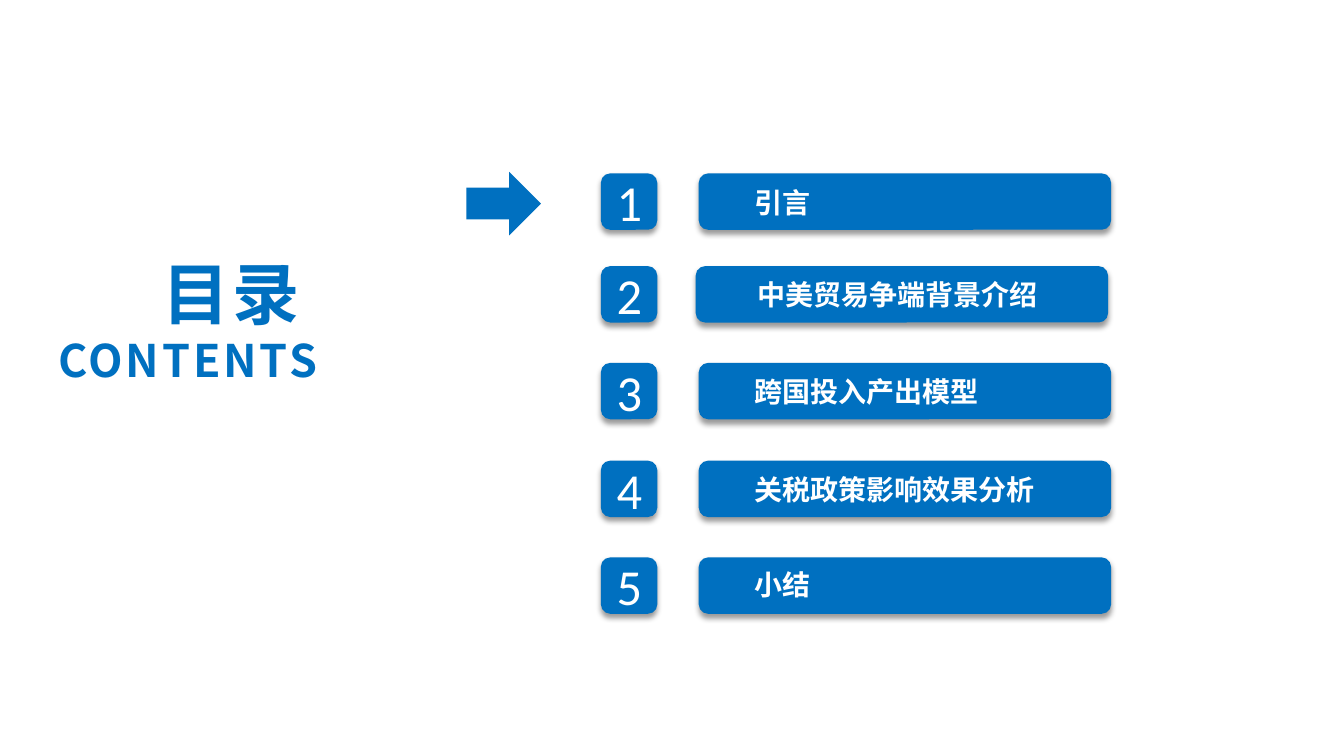
from dataclasses import dataclass

from lxml.etree import SubElement as Sub
from pptx import Presentation
from pptx.dml.color import RGBColor as RGB
from pptx.enum.shapes import MSO_SHAPE as Kind
from pptx.enum.text import MSO_ANCHOR as Anchor, MSO_AUTO_SIZE as Auto, PP_ALIGN as Align
from pptx.oxml.ns import qn
from pptx.util import Inches, Pt


@dataclass(frozen=True)
class Theme:
    """Colours, fonts and type sizes of the agenda."""
    blue: RGB = RGB(0x00, 0x70, 0xC0)
    white: RGB = RGB(0xFF, 0xFF, 0xFF)
    shade: str = "000000"
    latin: str = "Calibri"
    hans: str = "Noto Sans CJK SC"
    digit: int = 36
    label: int = 20
    head: int = 48
    sub: int = 32


class Deck:
    """Draws the agenda elements on the current slide."""

    def __init__(self, theme):
        """Open a blank widescreen slide."""
        self.theme = theme
        self.prs = Presentation()
        self.prs.slide_width, self.prs.slide_height = Inches(13.33), Inches(7.5)
        self.slide = self.prs.slides.add_slide(self.prs.slide_layouts[6])

    def form(self, home, kind, box):
        """Add a plain blue shape."""
        shape = home.add_shape(kind, *map(Inches, box))
        shape.shadow.inherit = False
        shape.fill.solid()
        shape.fill.fore_color.rgb = self.theme.blue
        shape.line.fill.background()
        return shape

    def card(self, home, box):
        """Add a rounded blue card with a soft shadow below."""
        shape = self.form(home, Kind.ROUNDED_RECTANGLE, box)
        glow = shape.element.spPr.find(qn("a:effectLst"))
        drop = Sub(glow, qn("a:outerShdw"), blurRad=str(Pt(4)), dist=str(Pt(3)),
                   dir="5400000", algn="t", rotWithShape="0")
        tone = Sub(drop, qn("a:srgbClr"), val=self.theme.shade)
        Sub(tone, qn("a:alpha"), val="40000")
        return shape

    def style(self, para, face, size, color, bold=False, gap=0):
        """Format every run of a paragraph."""
        for run in para.runs:
            font = run.font
            font.name, font.size, font.bold = face, Pt(size), bold
            font.color.rgb = color
            props = run._r.get_or_add_rPr()
            Sub(props, qn("a:ea"), typeface=face)
            if gap:
                props.set("spc", str(gap * 100))

    def inset(self, frame):
        """Set the common text margins."""
        frame.margin_left = frame.margin_right = Inches(0.13)
        frame.margin_top = frame.margin_bottom = Inches(0.07)
        frame.word_wrap = True

    def note(self, home, box, text):
        """Add a text box that grows with its text."""
        frame = home.add_textbox(*map(Inches, box)).text_frame
        self.inset(frame)
        frame.auto_size = Auto.SHAPE_TO_FIT_TEXT
        frame.text = text
        return frame

    def badge(self, num, top):
        """Add a numbered square."""
        frame = self.card(self.slide.shapes, (5.96, top, 0.56, 0.56)).text_frame
        self.inset(frame)
        frame.vertical_anchor = Anchor.MIDDLE
        frame.text = str(num)
        para = frame.paragraphs[0]
        para.alignment = Align.CENTER
        self.style(para, self.theme.latin, self.theme.digit, self.theme.white)

    def topic(self, text, top, left, start, drop, width):
        """Add a topic bar grouped with its label."""
        home = self.slide.shapes.add_group_shape().shapes
        self.card(home, (left, top, 4.09, 0.56))
        frame = self.note(home, (start, top + drop, width, 0.47), text)
        self.style(frame.paragraphs[0], self.theme.hans, self.theme.label,
                   self.theme.white, True)

    def title(self, head, sub):
        """Add the two-line heading."""
        look = self.theme
        frame = self.note(self.slide.shapes, (0.21, 2.43, 3.07, 1.48), f"{head}\n{sub}")
        for para, size in zip(frame.paragraphs, (look.head, look.sub)):
            para.alignment = Align.RIGHT
            self.style(para, look.hans, size, look.blue, True, 2)

    def arrow(self):
        """Add the arrow that points at the current topic."""
        mark = self.form(self.slide.shapes, Kind.DOWN_ARROW, (4.68, 1.65, 0.63, 0.74))
        mark.rotation = 270


def main():
    """Build and save the agenda."""
    deck = Deck(Theme())
    topics = (
        ("引言", 1.72, 6.93, 7.35, 0.05, 2.9),
        ("中美贸易争端背景介绍", 2.64, 6.9, 7.38, 0.04, 3.4),
        ("跨国投入产出模型", 3.6, 6.93, 7.35, 0.05, 3.65),
        ("关税政策影响效果分析", 4.57, 6.93, 7.35, 0.05, 3.42),
        ("小结", 5.53, 6.93, 7.35, 0.03, 2.99),
    )
    for num, (text, top, *rest) in enumerate(topics, 1):
        deck.badge(num, top)
        deck.topic(text, top, *rest)
    deck.title("目录 ", "CONTENTS")
    deck.arrow()
    deck.prs.save("out.pptx")


if __name__ == "__main__":
    main()
